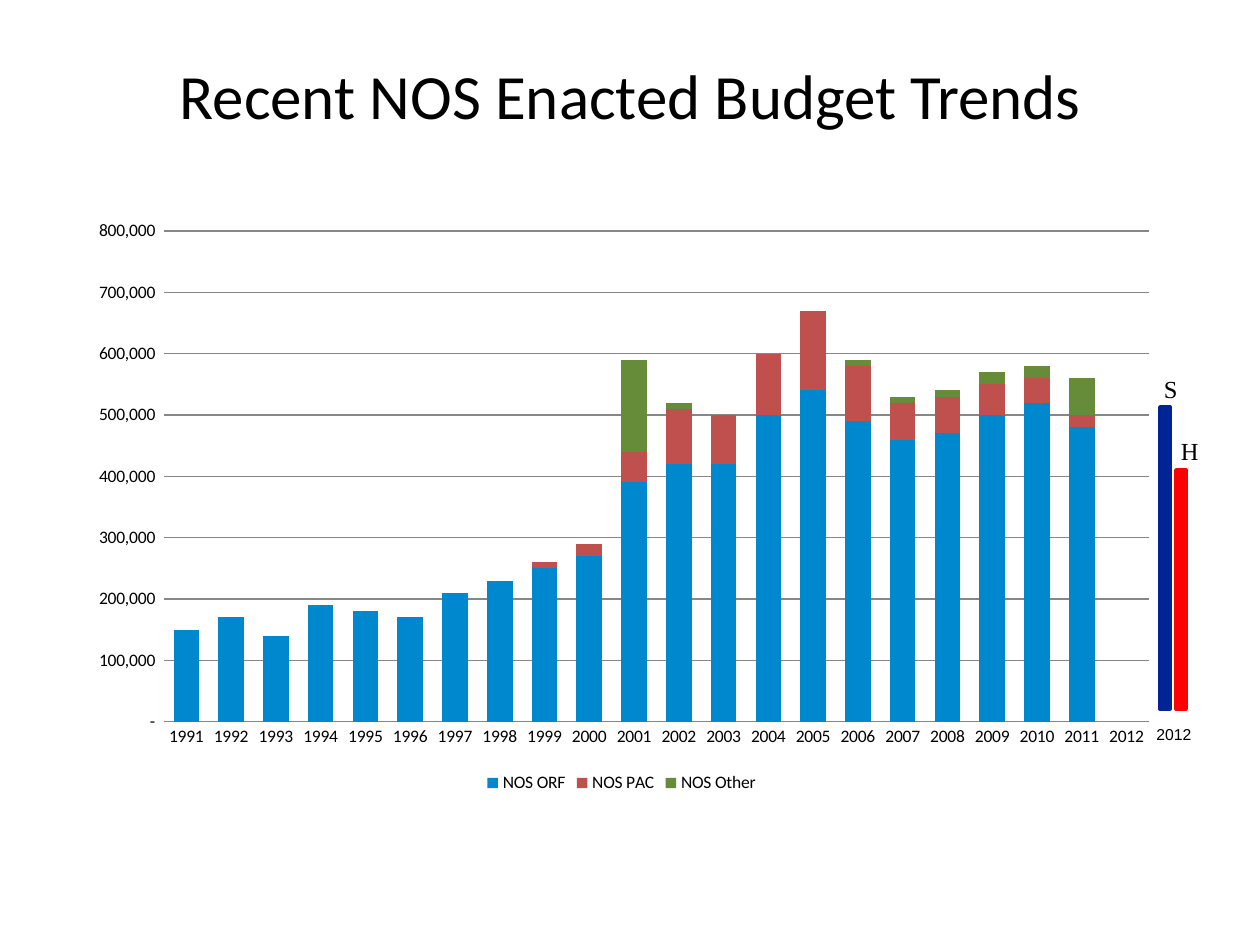
from dataclasses import dataclass

from lxml import etree
from pptx import Presentation
from pptx.chart.data import CategoryChartData
from pptx.dml.color import RGBColor
from pptx.enum.chart import XL_CHART_TYPE, XL_LEGEND_POSITION, XL_TICK_MARK
from pptx.enum.shapes import MSO_SHAPE
from pptx.enum.text import MSO_ANCHOR, PP_ALIGN
from pptx.oxml.ns import qn
from pptx.util import Pt

STACKED = XL_CHART_TYPE.COLUMN_STACKED
BOTTOM = XL_LEGEND_POSITION.BOTTOM
NO_TICK = XL_TICK_MARK.NONE
RECTANGLE = MSO_SHAPE.RECTANGLE
MIDDLE, TOP = MSO_ANCHOR.MIDDLE, MSO_ANCHOR.TOP
CENTER, LEFT = PP_ALIGN.CENTER, PP_ALIGN.LEFT

EMU_PER_PX = 914400 / 126
NUMBER_FORMAT = '_(* #,##0_);_(* \\(#,##0\\);_(* "-"_);_(@_)'

YEARS = [str(year) for year in range(1991, 2013)]
NO_FUNDS = [0] * 8  # 1991 to 1998
# Thousands of the axis unit; 2012 has no enacted figure
BUDGET = {
    "NOS ORF": [150, 170, 140, 190, 180, 170, 210, 230, 250, 270, 390,
                420, 420, 500, 540, 490, 460, 470, 500, 520, 480],
    "NOS PAC": NO_FUNDS + [10, 20, 50, 90, 80, 100, 130, 90, 60, 60, 50, 40, 20],
    "NOS Other": NO_FUNDS + [0, 0, 150, 10, -10, 0, 0, 10, 10, 10, 20, 20, 60],
}


def rgb(value):
    return RGBColor.from_string(value)


def emu(*lengths):
    return [round(length * EMU_PER_PX) for length in lengths]


@dataclass(frozen=True)
class Theme:
    ink: str = "000000"
    grid: str = "878787"
    house: str = "FF0000"
    senate: str = "002395"
    series: tuple = ("0088CE", "C0504D", "668C3A")
    sans: str = "Calibri"
    serif: str = "Times New Roman"
    label: str = "Arial"
    title_size: int = 36
    chart_size: int = 10
    mark_size: int = 14
    year_size: int = 9


class SlideBuilder:
    def __init__(self, slide, theme):
        self.slide = slide
        self.theme = theme

    def style_font(self, font, name, size):
        for key, value in {"name": name, "size": Pt(size)}.items():
            setattr(font, key, value)
        font.color.rgb = rgb(self.theme.ink)

    def text(self, parent, box, words, font, size, **layout):
        frame = parent.add_textbox(*emu(*box)).text_frame
        frame.word_wrap = True
        for key, value in layout.items():
            if key != "alignment":
                setattr(frame, key, value)
        para = frame.paragraphs[0]
        para.alignment = layout.get("alignment", LEFT)
        span = para.add_run()
        span.text = words
        self.style_font(span.font, font, size)

    def bar(self, parent, box, color):
        shape = parent.add_shape(RECTANGLE, *emu(*box))
        shape.shadow.inherit = False
        shape.fill.solid()
        shape.fill.fore_color.rgb = rgb(color)
        shape.line.color.rgb = rgb(color)
        shape.line.width = Pt(2)

    def stacked_columns(self, box, categories, series):
        data = CategoryChartData(number_format=NUMBER_FORMAT)
        data.categories = categories
        for name, values in series.items():
            padding = [None] * (len(categories) - len(values))
            data.add_series(name, [value * 1000 for value in values] + padding)
        chart = self.slide.shapes.add_chart(STACKED, *emu(*box), data).chart
        self.style_font(chart.font, self.theme.sans, self.theme.chart_size)
        chart.has_title = False
        chart.has_legend = True
        chart.legend.position = BOTTOM
        chart.legend.include_in_layout = False

        plot = chart.plots[0]
        for key, value in {"gap_width": 75, "overlap": 100,
                           "vary_by_categories": False}.items():
            setattr(plot, key, value)
        for column, color in zip(plot.series, self.theme.series):
            column.invert_if_negative = False
            column.format.fill.solid()
            column.format.fill.fore_color.rgb = rgb(color)

        for axis in (chart.category_axis, chart.value_axis):
            axis.major_tick_mark = NO_TICK
            axis.minor_tick_mark = NO_TICK
        scale = chart.value_axis
        for key, value in {"minimum_scale": 0, "maximum_scale": 800000,
                           "major_unit": 100000,
                           "has_major_gridlines": True}.items():
            setattr(scale, key, value)
        scale.tick_labels.number_format = NUMBER_FORMAT
        scale.tick_labels.number_format_is_linked = False
        scale.format.line.fill.background()
        for line in (scale.major_gridlines.format.line,
                     chart.category_axis.format.line):
            line.color.rgb = rgb(self.theme.grid)
            line.width = Pt(0.75)
        return chart

    def place_plot(self, chart, chart_box, plot_box):
        """Fix the inner plot area, given in slide px, inside the chart."""
        left, top, width, height = chart_box
        x, y, w, h = plot_box
        area = chart.plots[0]._element.getparent()
        for old in area.findall(qn("c:layout")):
            area.remove(old)
        layout = etree.Element(qn("c:layout"))
        area.insert(0, layout)
        manual = etree.SubElement(layout, qn("c:manualLayout"))
        settings = {
            "layoutTarget": "inner", "xMode": "edge", "yMode": "edge",
            "x": (x - left) / width, "y": (y - top) / height,
            "w": w / width, "h": h / height,
        }
        for tag, value in settings.items():
            etree.SubElement(manual, qn(f"c:{tag}")).set("val", str(value))


def main():
    deck = Presentation()
    deck.slide_width, deck.slide_height = emu(1260, 945)
    theme = Theme()
    page = SlideBuilder(deck.slides.add_slide(deck.slide_layouts[6]), theme)

    page.text(page.slide.shapes, (95, 42, 1071, 105),
              "Recent NOS Enacted Budget Trends", theme.sans, theme.title_size,
              vertical_anchor=MIDDLE, alignment=CENTER)

    chart_box = (73, 210, 1097, 588)
    chart = page.stacked_columns(chart_box, YEARS, BUDGET)
    page.place_plot(chart, chart_box, (164, 231, 985, 491))

    proposals = page.slide.shapes.add_group_shape().shapes
    bar_bottom = 709
    for left, top, color in ((1176, 470, theme.house), (1160, 407, theme.senate)):
        page.bar(proposals, (left, top, 10, bar_bottom - top), color)
    for left, top, mark in ((1155, 368, "S"), (1172, 430, "H")):
        page.text(proposals, (left, top, 21, 43), mark, theme.serif,
                  theme.mark_size, word_wrap=False, vertical_anchor=TOP,
                  margin_left=emu(9)[0], margin_right=0, alignment=CENTER)
    page.text(proposals, (1144, 719, 73, 32), "2012", theme.label, theme.year_size)

    deck.save("out.pptx")


if __name__ == "__main__":
    main()
